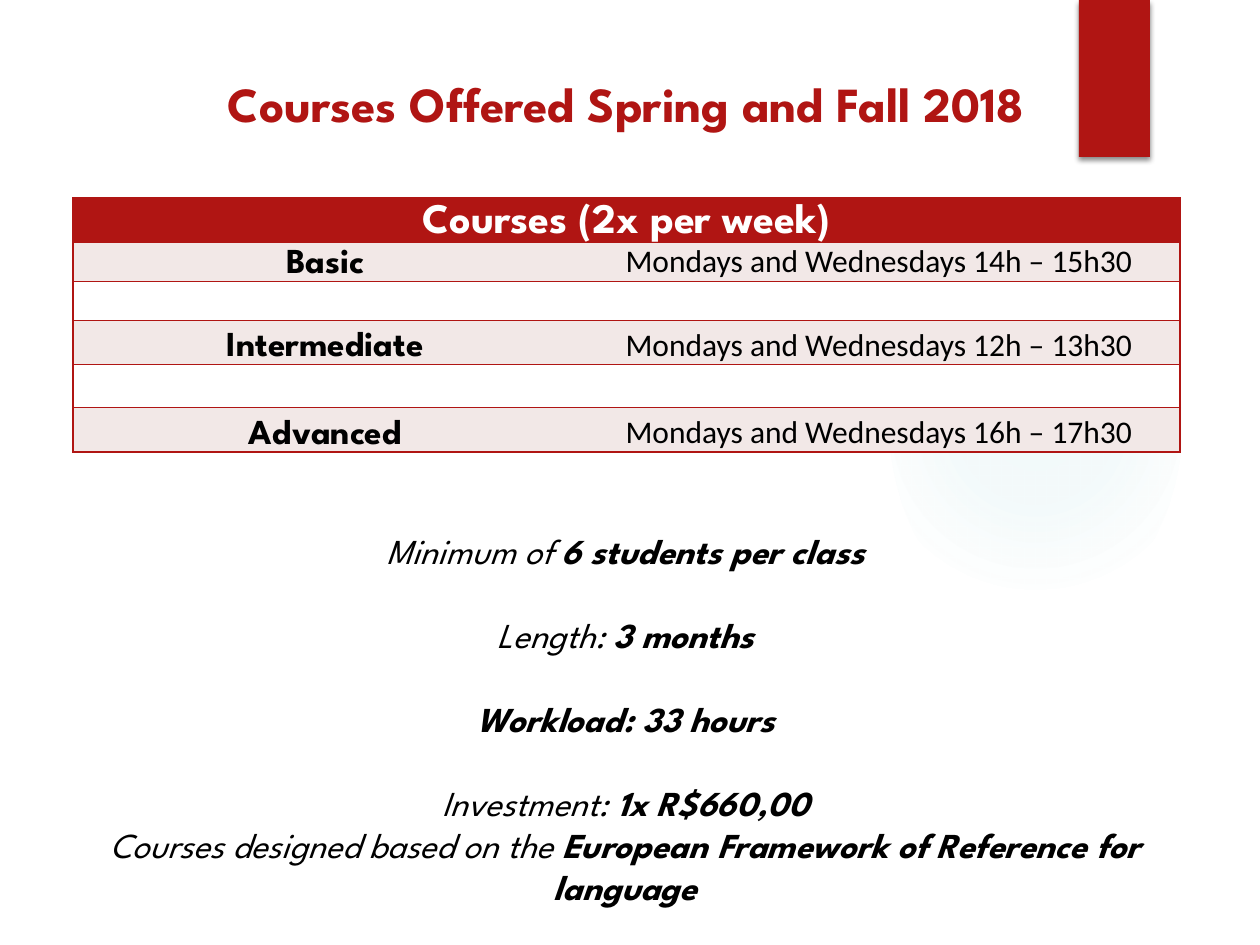
"""Build a slide listing the courses, their hours and their terms."""
import lxml.etree
import pptx
import pptx.dml.color
import pptx.enum.shapes
import pptx.enum.text
import pptx.oxml
import pptx.oxml.ns
import pptx.util

RGB = pptx.dml.color.RGBColor
RED = RGB(0xB0, 0x15, 0x13)
PINK = RGB(0xF2, 0xE8, 0xE7)
TEAL = RGB(0x50, 0xB9, 0xC1)
WHITE = RGB(0xFF, 0xFF, 0xFF)
BLACK = RGB(0, 0, 0)
HEAD = "League Spartan"
BODY = "Calibri"
SCALE = 914400 // 126
SHAPE = pptx.enum.shapes.MSO_SHAPE
ALIGN = pptx.enum.text.PP_ALIGN
ANCHOR = pptx.enum.text.MSO_ANCHOR
SPACE = pptx.oxml.ns.nsdecls("a")

COURSES = [
    ("Basic", "Mondays and Wednesdays 14h – 15h30"),
    None,
    ("Intermediate", "Mondays and Wednesdays 12h – 13h30"),
    None,
    ("Advanced", "Mondays and Wednesdays 16h – 17h30"),
]
HEIGHTS = [44, 39, 39, 44, 43, 44]
WIDTHS = [505, 602]
TERMS = [
    [("Minimum of ", False), ("6 students per class", True)],
    [("Length: ", False), ("3 months", True)],
    [("Workload: 33 hours", True)],
    [("Investment:", False), (" 1x R$660,00", True)],
    [("Courses designed based on the ", False),
     ("European Framework of Reference for language", True)],
]


def px(*sizes):
    """Turn pixels into EMU."""
    return [pptx.util.Emu(size * SCALE) for size in sizes]


def add_run(para, text, size, color=BLACK, bold=True, italic=False, face=HEAD):
    """Add one styled run to a centred paragraph."""
    para.alignment = ALIGN.CENTER
    run = para.add_run()
    run.text = text
    font = run.font
    font.name, font.size = face, pptx.util.Pt(size)
    font.bold, font.italic = bold, italic
    font.color.rgb = color


def add_shape(slide, kind, box, color):
    """Add a plain shape without a line."""
    shape = slide.shapes.add_shape(kind, *px(*box))
    shape.shadow.inherit = False
    shape.fill.solid()
    shape.fill.fore_color.rgb = color
    shape.line.fill.background()
    return shape


def add_glow(slide):
    """Add the pale ellipse that fades outward."""
    shape = add_shape(slide, SHAPE.OVAL, (890, 231, 291, 388), TEAL)
    stops = "".join(
        f'<a:gs pos="{pos}000"><a:srgbClr val="{TEAL}">'
        f'<a:alpha val="{alpha}000"/></a:srgbClr></a:gs>'
        for pos, alpha in [(0, 7), (36, 6), (69, 0)])
    grad = pptx.oxml.parse_xml(
        f'<a:gradFill {SPACE}><a:gsLst>{stops}</a:gsLst><a:path path="circle">'
        '<a:fillToRect l="50000" t="50000" r="50000" b="50000"/>'
        '</a:path></a:gradFill>')
    props = shape.fill._xPr
    props.replace(props.find(pptx.oxml.ns.qn("a:solidFill")), grad)


def add_ribbon(slide):
    """Add the red ribbon with its soft shadow."""
    shape = add_shape(slide, SHAPE.RECTANGLE, (1079, 0, 71, 157), RED)
    effect = shape.element.spPr.find(pptx.oxml.ns.qn("a:effectLst"))
    effect.append(pptx.oxml.parse_xml(
        f'<a:outerShdw {SPACE} blurRad="38100" dist="25400" dir="5400000" '
        'rotWithShape="0"><a:srgbClr val="000000"><a:alpha val="45000"/>'
        '</a:srgbClr></a:outerShdw>'))


def add_box(slide, box):
    """Add a wrapping text box and return its frame."""
    frame = slide.shapes.add_textbox(*px(*box)).text_frame
    frame.word_wrap = True
    return frame


def set_cell(cell, color, sides):
    """Set fill, margins and the red borders on the given sides."""
    cell.fill.solid()
    cell.fill.fore_color.rgb = color
    cell.vertical_anchor = ANCHOR.BOTTOM
    cell.margin_left = cell.margin_right = px(5)[0]
    cell.margin_top = cell.margin_bottom = 0
    props = cell._tc.get_or_add_tcPr()
    for place, side in enumerate("LRTB"):
        paint = "<a:noFill/>"
        if side in sides:
            paint = f'<a:solidFill><a:srgbClr val="{RED}"/></a:solidFill>'
        props.insert(place, pptx.oxml.parse_xml(
            f'<a:ln{side} {SPACE} w="12700">{paint}</a:ln{side}>'))


def add_table(slide):
    """Add the table of courses and hours."""
    table = slide.shapes.add_table(
        len(HEIGHTS), 2, *px(73, 198, sum(WIDTHS), sum(HEIGHTS))).table
    table.first_row = table.horz_banding = False
    for row, high in zip(table.rows, HEIGHTS):
        row.height = px(high)[0]
    for col, wide in zip(table.columns, WIDTHS):
        col.width = px(wide)[0]
    top = table.cell(0, 0)
    top.merge(table.cell(0, 1))
    for cell in table.rows[0].cells:
        set_cell(cell, RED, "LRTB")
    para = top.text_frame.paragraphs[0]
    para.line_spacing = 1.15
    add_run(para, "Courses (2x per week)", 24, WHITE)
    for num, course in enumerate(COURSES, 1):
        left, right = table.cell(num, 0), table.cell(num, 1)
        color = PINK if course else WHITE
        set_cell(left, color, "LTB")
        set_cell(right, color, "RTB")
        if course:
            name, hours = (cell.text_frame.paragraphs[0] for cell in (left, right))
            name.line_spacing = 1.15
            hours.line_spacing = 1.0 if num == 1 else 1.15
            add_run(name, course[0], 20)
            add_run(hours, course[1], 18, bold=False, face=BODY)


def add_terms(slide):
    """Add the terms below the table."""
    frame = add_box(slide, (73, 523, 1105, 394))
    frame.auto_size = pptx.enum.text.MSO_AUTO_SIZE.SHAPE_TO_FIT_TEXT
    last = len(TERMS) - 1
    for num, term in enumerate(TERMS):
        para = frame.add_paragraph() if num else frame.paragraphs[0]
        if 0 < num < last:
            para.space_before = pptx.util.Pt(24)
        for text, bold in term:
            add_run(para, text, 20, bold=bold, italic=True)


def main():
    """Build and save the slide."""
    deck = pptx.Presentation()
    deck.slide_width, deck.slide_height = px(1260, 945)
    slide = deck.slides.add_slide(deck.slide_layouts[6])
    add_glow(slide)
    add_ribbon(slide)
    add_table(slide)
    add_terms(slide)
    title = add_box(slide, (-4, 67, 1260, 106))
    add_run(title.paragraphs[0], "Courses Offered Spring and Fall 2018", 28, RED)
    deck.save("out.pptx")


if __name__ == "__main__":
    main()
